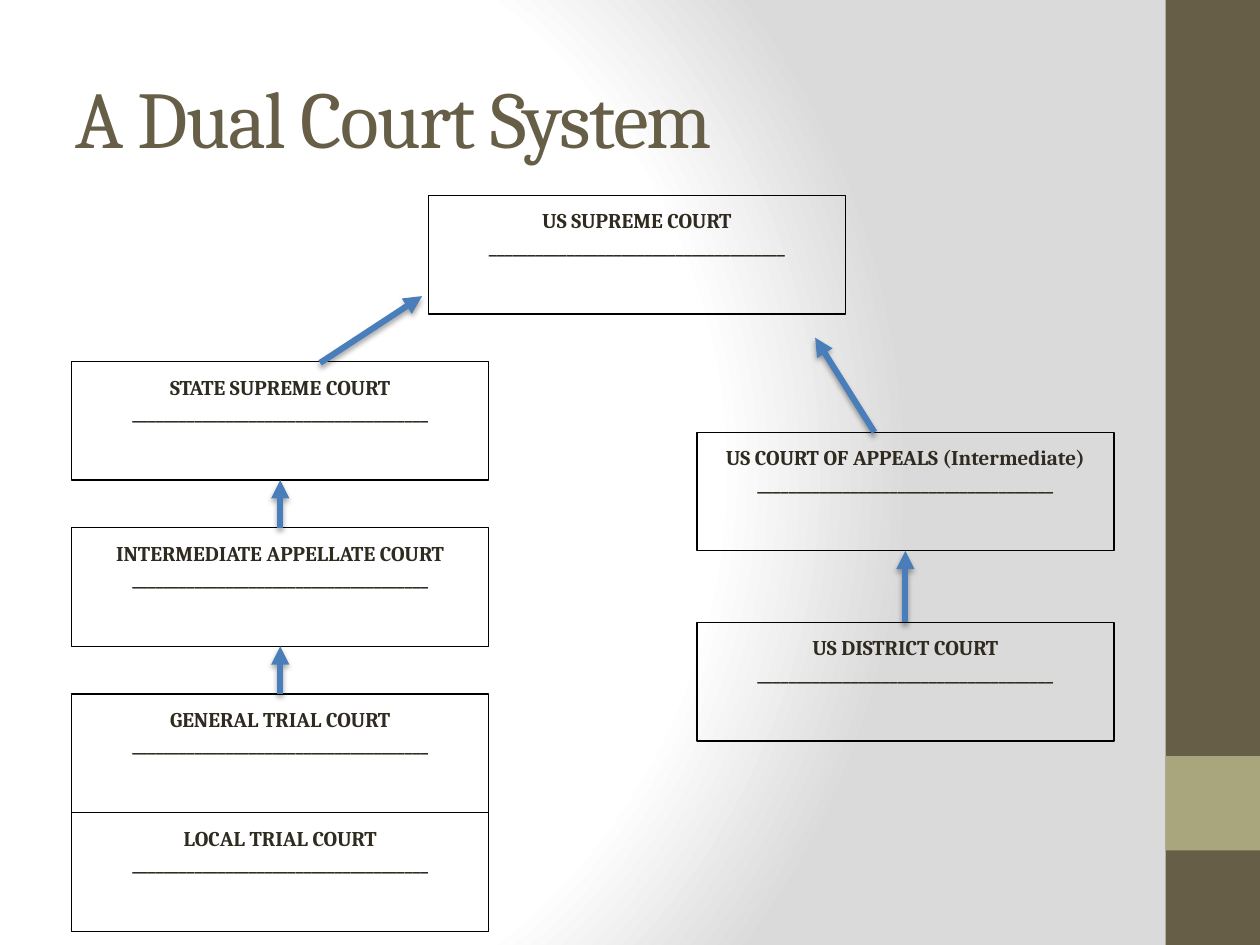
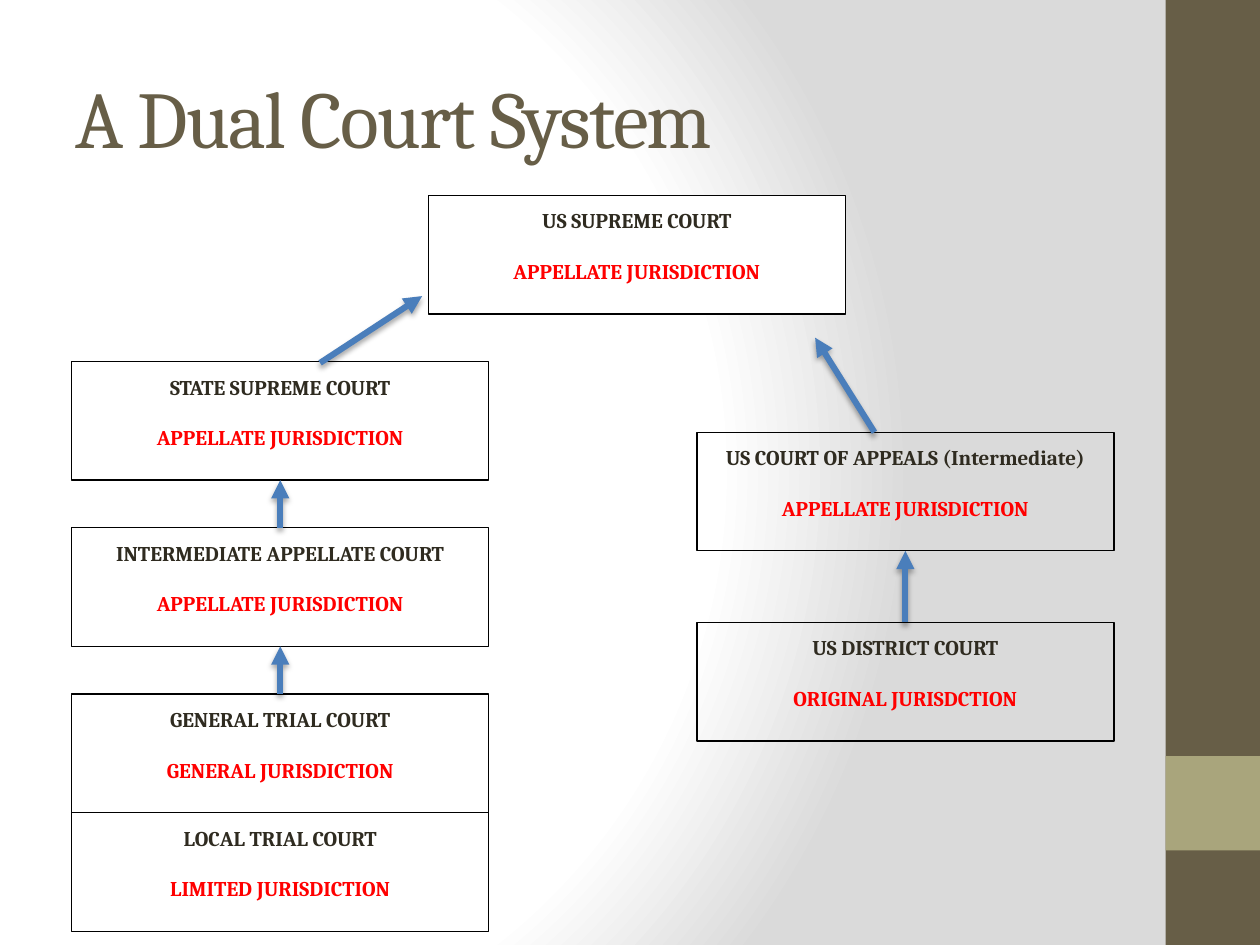
from lxml import etree
from pptx import Presentation
from pptx.dml.color import RGBColor
from pptx.enum import shapes, text
from pptx.oxml import ns
from pptx.util import Pt

# Colours and type
BROWN = RGBColor(0x67, 0x5E, 0x47)
SAGE = RGBColor(0xA9, 0xA5, 0x7C)
INK = RGBColor(0x2F, 0x2B, 0x20)
RED = RGBColor(0xFF, 0x00, 0x00)
BLUE = RGBColor(0x4A, 0x7E, 0xBB)
BLACK = RGBColor(0x00, 0x00, 0x00)
WHITE = RGBColor(0xFF, 0xFF, 0xFF)
GREY = RGBColor(0xDA, 0xDA, 0xDA)
FONT = "Cambria"

# Layout, in points
PAGE_WIDTH, PAGE_HEIGHT = 720, 540
BAND_LEFT, BAND_WIDTH = 666, 54
COURT_WIDTH, COURT_HEIGHT = 238.3, 67.8
STATE_LEFT, STATE_TOP, STATE_STEP = 41, 206.6, 95
FEDERAL_LEFT = 398.2
APPEALS_TOP, DISTRICT_TOP = 247, 355.7
INSET = 7.2
LINE_HEIGHT = 14.5

GENERAL_TOP = STATE_TOP + 2 * STATE_STEP

# Name, left, top, jurisdiction
COURTS = [
    ("US SUPREME COURT", 244.8, 111.6, "APPELLATE JURISDICTION"),
    ("STATE SUPREME COURT", STATE_LEFT, STATE_TOP, "APPELLATE JURISDICTION"),
    ("INTERMEDIATE APPELLATE COURT", STATE_LEFT, STATE_TOP + STATE_STEP,
     "APPELLATE JURISDICTION"),
    ("GENERAL TRIAL COURT", STATE_LEFT, GENERAL_TOP, "GENERAL JURISDICTION"),
    ("LOCAL TRIAL COURT", STATE_LEFT, GENERAL_TOP + COURT_HEIGHT,
     "LIMITED JURISDICTION"),
    ("US COURT OF APPEALS (Intermediate)", FEDERAL_LEFT, APPEALS_TOP,
     "APPELLATE JURISDICTION"),
    ("US DISTRICT COURT", FEDERAL_LEFT, DISTRICT_TOP, "ORIGINAL JURISDCTION"),
]
ANSWER_BLANK = "_" * 38


def write(para, words, *, size=12, color=INK, bold=False, align=None,
          before=0, tracking=None):
    """Add one formatted span to a paragraph."""
    para.alignment = align
    para.space_before = Pt(before)
    span = para.add_run()
    span.text = words
    span.font.name = FONT
    span.font.size = Pt(size)
    span.font.bold = bold
    span.font.color.rgb = color
    if tracking is not None:
        span.font._element.set("spc", str(tracking * 100))


def add_xml(parent, markup):
    """Append DrawingML markup to an element."""
    root = etree.fromstring(f'<root {ns.nsdecls("a")}>{markup}</root>')
    parent.append(root[0])


class CourtDeck:
    def __init__(self):
        self.deck = Presentation()
        self.deck.slide_width = Pt(PAGE_WIDTH)
        self.deck.slide_height = Pt(PAGE_HEIGHT)
        self.page = None
        self.set_background()

    def set_background(self):
        """Radial gradient on the master, shared by every page."""
        master = self.deck.slide_master
        master.background.fill.solid()
        holder = master.element.find(".//" + ns.qn("p:bgPr"))
        holder.remove(holder[0])
        stops = "".join(
            f'<a:gs pos="{place * 1000}"><a:srgbClr val="{color}"/></a:gs>'
            for place, color in ((0, WHITE), (75, WHITE), (100, GREY)))
        add_xml(holder, f'<a:gradFill rotWithShape="1"><a:gsLst>{stops}</a:gsLst>'
                        '<a:path path="circle"><a:fillToRect l="20000" t="50000" '
                        'r="100000" b="50000"/></a:path></a:gradFill>')
        holder.insert(0, holder[-1])

    def add_page(self, title):
        self.page = self.deck.slides.add_slide(self.deck.slide_layouts[5])
        # Side bands
        self.rectangle(BAND_LEFT, 0, BAND_WIDTH, PAGE_HEIGHT, fill=BROWN)
        self.rectangle(BAND_LEFT, 432, BAND_WIDTH, BAND_WIDTH, fill=SAGE)
        # Title
        box = self.page.shapes.title
        box.left, box.top, box.width, box.height = Pt(36), Pt(21.6), Pt(600), Pt(90)
        frame = box.text_frame
        frame.auto_size = text.MSO_AUTO_SIZE.NONE
        frame.vertical_anchor = text.MSO_ANCHOR.MIDDLE
        write(frame.paragraphs[0], title, size=46, color=BROWN,
              align=text.PP_ALIGN.LEFT, tracking=-1)

    def rectangle(self, left, top, width, height, fill=None, line=None):
        box = self.page.shapes.add_shape(
            shapes.MSO_SHAPE.RECTANGLE, Pt(left), Pt(top), Pt(width), Pt(height))
        box.shadow.inherit = False
        if fill is None:
            box.fill.background()
        else:
            box.fill.solid()
            box.fill.fore_color.rgb = fill
        if line is None:
            box.line.fill.background()
        else:
            box.line.color.rgb = line
            box.line.width = Pt(0.75)
        return box

    def court(self, name, left, top, answer=None, fill=None):
        """Court box with its jurisdiction, or a blank to fill in."""
        box = self.rectangle(left, top, COURT_WIDTH, COURT_HEIGHT, fill, BLACK)
        frame = box.text_frame
        frame.word_wrap = True
        frame.vertical_anchor = text.MSO_ANCHOR.TOP
        frame.margin_left = frame.margin_right = Pt(INSET)
        frame.margin_top = frame.margin_bottom = Pt(INSET)
        style = dict(bold=True, align=text.PP_ALIGN.CENTER)
        write(frame.paragraphs[0], name, **style)
        if answer:
            write(frame.add_paragraph(), answer, color=RED,
                  before=LINE_HEIGHT, **style)
        else:
            write(frame.add_paragraph(), ANSWER_BLANK, **style)

    def arrow(self, start, end):
        line = self.page.shapes.add_connector(
            shapes.MSO_CONNECTOR.STRAIGHT, *map(Pt, start + end))
        line.line.color.rgb = BLUE
        line.line.width = Pt(3.5)
        add_xml(line.line._get_or_add_ln(), '<a:tailEnd type="triangle"/>')
        add_xml(line._element.spPr,
                f'<a:effectLst><a:outerShdw blurRad="{Pt(3)}" dist="{Pt(2)}" '
                'dir="5400000" rotWithShape="0"><a:srgbClr val="000000">'
                '<a:alpha val="35000"/></a:srgbClr></a:outerShdw></a:effectLst>')

    def appeal_routes(self):
        state_x = STATE_LEFT + COURT_WIDTH / 2
        federal_x = FEDERAL_LEFT + COURT_WIDTH / 2
        # Straight up within each system
        for x, lower, upper in (
                (state_x, GENERAL_TOP, STATE_TOP + STATE_STEP),
                (state_x, STATE_TOP + STATE_STEP, STATE_TOP),
                (federal_x, DISTRICT_TOP, APPEALS_TOP)):
            self.arrow((x, lower), (x, upper + COURT_HEIGHT))
        # Slanting to the US Supreme Court
        self.arrow((182.9, 207.4), (241.2, 169.2))
        self.arrow((499.7, APPEALS_TOP), (465.8, 193))

    def court_page(self, answered):
        self.add_page("A Dual Court System")
        for index, (name, left, top, answer) in enumerate(COURTS):
            self.court(name, left, top, answer if answered else None,
                       fill=WHITE if answered and index == 0 else None)
        self.appeal_routes()


def main():
    courts = CourtDeck()
    for answered in (False, True):
        courts.court_page(answered)
    courts.deck.save("out.pptx")


if __name__ == "__main__":
    main()
